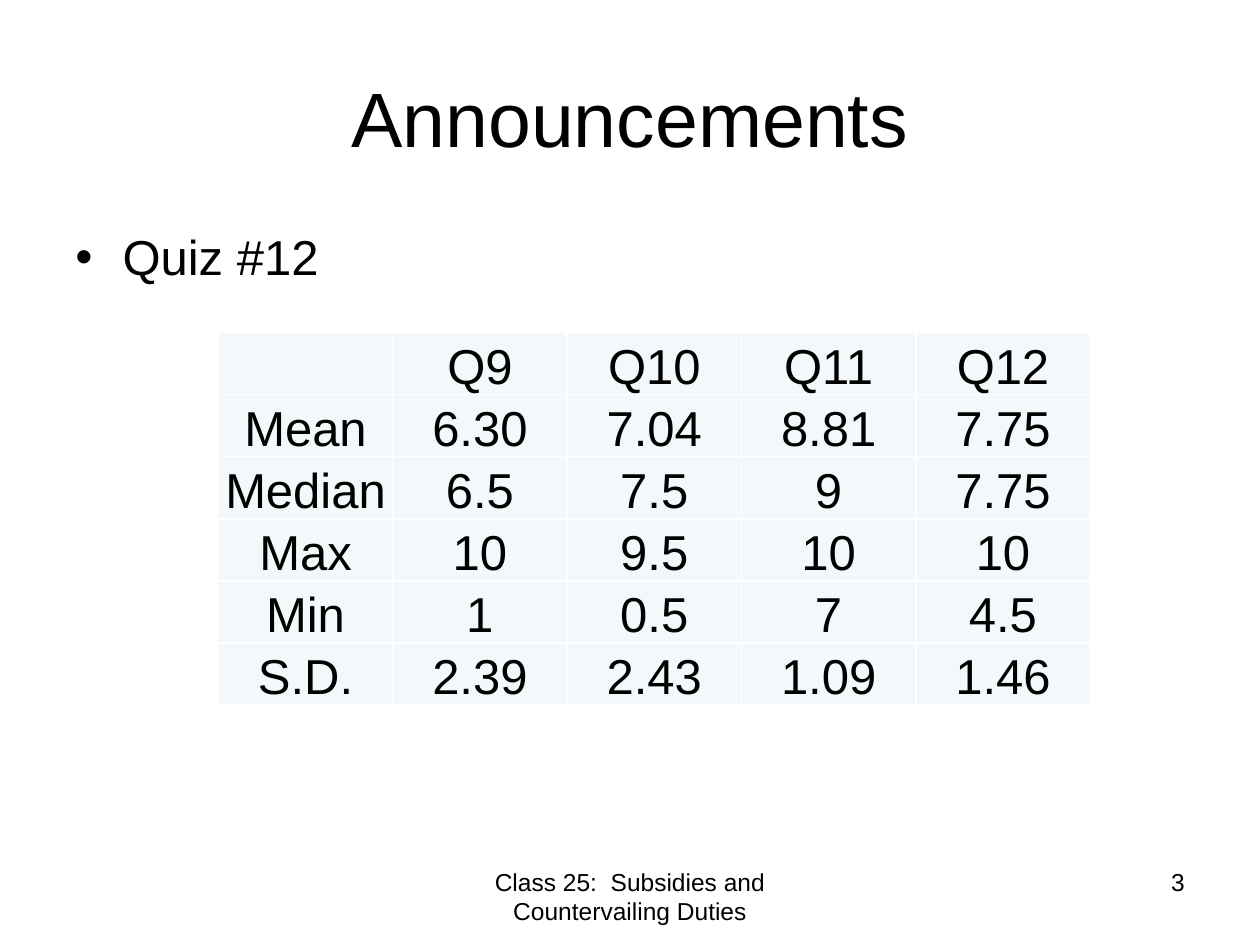
from lxml.etree import SubElement
from pptx import Presentation
from pptx.dml.color import RGBColor
from pptx.enum.text import MSO_ANCHOR as Anchor, PP_ALIGN as Align
from pptx.oxml.ns import qn
from pptx.util import Pt

FONT = "Arial"
INK = "000000"
PALE = "F3F9FA"
WHITE = "FFFFFF"

SCORES = [
    ["", "Q9", "Q10", "Q11", "Q12"],
    ["Mean", "6.30", "7.04", "8.81", "7.75"],
    ["Median", "6.5", "7.5", "9", "7.75"],
    ["Max", "10", "9.5", "10", "10"],
    ["Min", "1", "0.5", "7", "4.5"],
    ["S.D.", "2.39", "2.43", "1.09", "1.46"],
]


def color(code):
    return RGBColor.from_string(code)


def add_run(para, text, size):
    run = para.add_run()
    run.text = text
    run.font.name = FONT
    run.font.size = Pt(size)
    run.font.color.rgb = color(INK)


def add_text(slide, box, text, size, align=Align.LEFT, anchor=Anchor.TOP):
    """Add a wrapped one-paragraph text box and return its paragraph."""
    frame = slide.shapes.add_textbox(*map(Pt, box)).text_frame
    frame.word_wrap = True
    frame.vertical_anchor = anchor
    para = frame.paragraphs[0]
    para.alignment = align
    add_run(para, text, size)
    return para


def add_bullet(para, indent):
    props = para._p.get_or_add_pPr()
    props.set("marL", str(Pt(indent)))
    props.set("indent", str(Pt(-indent)))
    SubElement(props, qn("a:buFont"), typeface=FONT)
    SubElement(props, qn("a:buChar"), char="•")


def add_border(cell, code, width):
    """Draw all four edges; they must come before the cell's fill."""
    props = cell._tc.get_or_add_tcPr()
    for side in ("lnL", "lnR", "lnT", "lnB"):
        line = SubElement(props, qn(f"a:{side}"), w=str(Pt(width)))
        fill = SubElement(line, qn("a:solidFill"))
        SubElement(fill, qn("a:srgbClr"), val=code)


def fill_cell(cell, text):
    add_border(cell, WHITE, 1)
    cell.fill.solid()
    cell.fill.fore_color.rgb = color(PALE)
    if not text:
        return
    cell.vertical_anchor = Anchor.BOTTOM
    cell.margin_left = cell.margin_right = cell.margin_top = Pt(0.7)
    cell.margin_bottom = Pt(0)
    para = cell.text_frame.paragraphs[0]
    para.alignment = Align.CENTER
    add_run(para, text, 28)


def add_grid(slide, left, top, wide, high, data):
    """Add a table whose columns are wide and whose rows are high."""
    rows, cols = len(data), len(data[0])
    box = (left, top, wide * cols, high * rows)
    table = slide.shapes.add_table(rows, cols, *map(Pt, box)).table
    table.first_row = table.horz_banding = False
    for col in table.columns:
        col.width = Pt(wide)
    for row, texts in zip(table.rows, data):
        row.height = Pt(high)
        for cell, text in zip(row.cells, texts):
            fill_cell(cell, text)


def main():
    deck = Presentation()
    deck.slide_width, deck.slide_height = Pt(720), Pt(540)
    slide = deck.slides.add_slide(deck.slide_layouts[6])
    add_text(slide, (36, 21.6, 648, 90), "Announcements", 44,
             Align.CENTER, Anchor.MIDDLE)
    quiz = add_text(slide, (36, 126, 648, 356.4), "Quiz #12", 28)
    quiz.space_before = Pt(5.6)
    add_bullet(quiz, 27)
    add_text(slide, (246, 491.75, 228, 37.5),
             "Class 25:  Subsidies and Countervailing Duties", 14, Align.CENTER)
    add_text(slide, (516, 491.75, 168, 37.5), "3", 14, Align.RIGHT)
    add_grid(slide, 124.75, 190, 99.65, 35.5, SCORES)
    deck.save("out.pptx")


if __name__ == "__main__":
    main()
